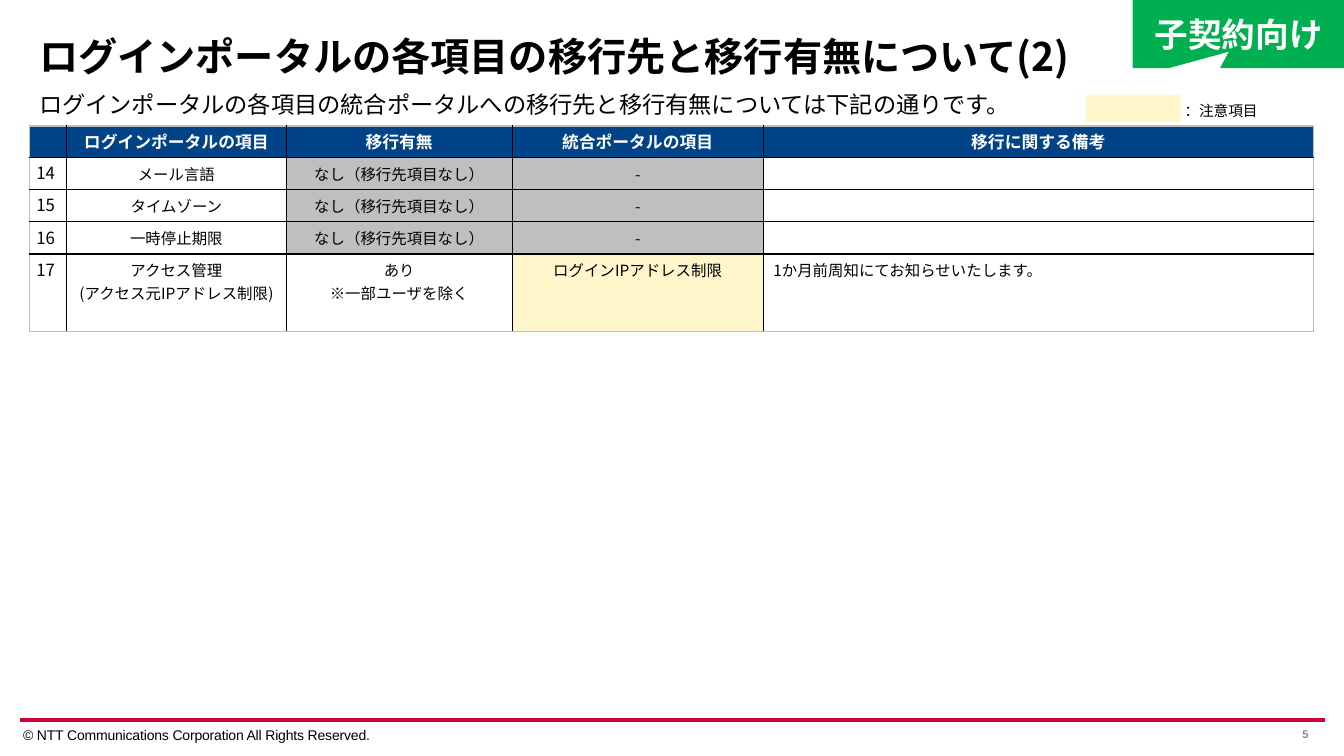
from lxml.etree import SubElement
from pptx import Presentation
from pptx.dml.color import RGBColor
from pptx.enum.shapes import MSO_CONNECTOR, MSO_SHAPE
from pptx.enum.text import MSO_ANCHOR, PP_ALIGN
from pptx.oxml.ns import qn
from pptx.util import Inches, Pt

BLACK = RGBColor(0x00, 0x00, 0x00)
WHITE = RGBColor(0xFF, 0xFF, 0xFF)
NAVY = RGBColor(0x00, 0x43, 0x86)
GRAY = RGBColor(0xBF, 0xBF, 0xBF)
CREAM = RGBColor(0xFF, 0xF6, 0xCC)
GREEN = RGBColor(0x00, 0xB0, 0x50)
RED = RGBColor(0xCC, 0x00, 0x33)
PAGE_GRAY = RGBColor(0x8C, 0x8C, 0x8C)
JP = "Noto Sans CJK JP"

TITLE = "ログインポータルの各項目の移行先と移行有無について(2)"
LEAD = "ログインポータルの各項目の統合ポータルへの移行先と移行有無については下記の通りです。"
AUDIENCE = "子契約向け"
LEGEND = "：注意項目"
COPYRIGHT = "© NTT Communications Corporation All Rights Reserved."
PAGE = "5"

NONE = "なし（移行先項目なし）"
ROWS = [
    ("", "ログインポータルの項目", "移行有無", "統合ポータルの項目", "移行に関する備考"),
    ("14", "メール言語", NONE, "-", ""),
    ("15", "タイムゾーン", NONE, "-", ""),
    ("16", "一時停止期限", NONE, "-", ""),
    ("17", "アクセス管理\v(アクセス元IPアドレス制限)", "あり\n※一部ユーザを除く",
     "ログインIPアドレス制限", "1か月前周知にてお知らせいたします。"),
]
COL_WIDTHS = [0.37, 2.18, 2.24, 2.49, 5.46]
ROW_HEIGHTS = [0.31, 0.32, 0.32, 0.32, 0.77]
ATTENTION_CELL = (4, 3)


def write(tf, text, size, color=BLACK, bold=False, align=None, font=JP):
    tf.text = text
    for p in tf.paragraphs:
        p.alignment = align
        for r in p.runs:
            r.font.size = Pt(size)
            r.font.bold = bold
            r.font.color.rgb = color
            r.font.name = font
            SubElement(r.font._element, qn("a:ea"), typeface=font)
        if not p.runs:
            SubElement(p._p, qn("a:endParaRPr"), sz=str(size * 100))


def set_margins(obj, left, top, right, bottom):
    obj.margin_left, obj.margin_top = Inches(left), Inches(top)
    obj.margin_right, obj.margin_bottom = Inches(right), Inches(bottom)


def add_text(s, box, margins, text, size, wrap=True, **style):
    tf = s.shapes.add_textbox(*map(Inches, box)).text_frame
    tf.word_wrap = wrap
    set_margins(tf, *margins)
    write(tf, text, size, **style)
    return tf


def add_block(s, kind, box, fill):
    sp = s.shapes.add_shape(kind, *map(Inches, box))
    sp.shadow.inherit = False
    sp.fill.solid()
    sp.fill.fore_color.rgb = fill
    sp.line.fill.background()
    return sp


def set_borders(cell, outer_sides):
    tcPr = cell._tc.get_or_add_tcPr()
    for i, side in enumerate(("lnL", "lnR", "lnT", "lnB")):
        ln = SubElement(tcPr, qn("a:" + side), w=str(Pt(1)))
        fill = SubElement(ln, qn("a:solidFill"))
        color = GRAY if side in outer_sides else BLACK
        SubElement(fill, qn("a:srgbClr"), val=str(color))
        tcPr.insert(i, ln)


def cell_fill(row, col, text):
    if row == 0:
        return NAVY
    if (row, col) == ATTENTION_CELL:
        return CREAM
    return GRAY if text in (NONE, "-") else WHITE


def add_items_table(s):
    frame = s.shapes.add_table(
        len(ROWS), len(COL_WIDTHS), Inches(0.29), Inches(1.25),
        Inches(sum(COL_WIDTHS)), Inches(sum(ROW_HEIGHTS)))
    table = frame.table
    for column, width in zip(table.columns, COL_WIDTHS):
        column.width = Inches(width)
    last_row, last_col = len(ROWS) - 1, len(COL_WIDTHS) - 1
    for i, texts in enumerate(ROWS):
        table.rows[i].height = Inches(ROW_HEIGHTS[i])
        for j, text in enumerate(texts):
            cell = table.cell(i, j)
            header, number = i == 0, j == 0
            if header or number:
                set_margins(cell, 0.07, 0.03, 0.07, 0.03)
            if header:
                cell.vertical_anchor = MSO_ANCHOR.MIDDLE
            centred = header or 0 < j < last_col
            write(cell.text_frame, text, 12 if header or number else 11,
                  color=WHITE if header else BLACK, bold=header,
                  align=PP_ALIGN.CENTER if centred else None)
            cell.fill.solid()
            cell.fill.fore_color.rgb = cell_fill(i, j, text)
            edges = {"lnL": j == 0, "lnR": j == last_col,
                     "lnT": i == 0, "lnB": i == last_row}
            set_borders(cell, [side for side, outer in edges.items() if outer])


def main():
    prs = Presentation()
    prs.slide_width, prs.slide_height = Inches(13.33), Inches(7.5)
    s = prs.slides.add_slide(prs.slide_layouts[6])

    tf = add_text(s, (0.23, 7.21, 4.5, 0.17), (0, 0, 0, 0), COPYRIGHT, 10, font="Arial")
    tf.paragraphs[0].runs[0].font._element.set("spc", "-10")
    rule = s.shapes.add_connector(MSO_CONNECTOR.STRAIGHT, Inches(0.2), Inches(7.14),
                                  Inches(13.14), Inches(7.14))
    rule.line.color.rgb = RED
    rule.line.width = Pt(3)
    SubElement(rule._element.spPr, qn("a:effectLst"))
    tf = add_text(s, (10.05, 7.13, 3, 0.31), (0.07, 0, 0.07, 0), PAGE, 8,
                  color=PAGE_GRAY, bold=True, align=PP_ALIGN.RIGHT, font="Arial")
    tf.vertical_anchor = MSO_ANCHOR.MIDDLE

    tf = add_text(s, (0.29, 0.29, 11.5, 0.46), (0.1, 0.08, 0.1, 0.04), TITLE, 28, bold=True)
    tf.paragraphs[0].line_spacing = 0.9
    tf = add_text(s, (0.29, 0.92, 12.76, 0.34), (0.1, 0.05, 0.1, 0.05), LEAD, 16.6)
    tf.paragraphs[0].line_spacing = 0.7

    add_items_table(s)

    callout = add_block(s, MSO_SHAPE.RECTANGULAR_CALLOUT, (11.24, 0, 2.09, 0.67), GREEN)
    callout.adjustments[0], callout.adjustments[1] = -0.04, 0.25
    callout.line.color.rgb = GREEN
    callout.line.width = Pt(1)
    tf = callout.text_frame
    set_margins(tf, 0.08, 0.08, 0.08, 0.08)
    tf.vertical_anchor = MSO_ANCHOR.MIDDLE
    write(tf, AUDIENCE, 24, color=WHITE, bold=True, align=PP_ALIGN.CENTER)

    add_block(s, MSO_SHAPE.RECTANGLE, (10.77, 0.94, 0.94, 0.27), CREAM)
    add_text(s, (11.65, 0.96, 0.94, 0.28), (0.1, 0.05, 0.1, 0.05), LEGEND, 10.5, wrap=False)

    prs.save("out.pptx")


if __name__ == "__main__":
    main()
